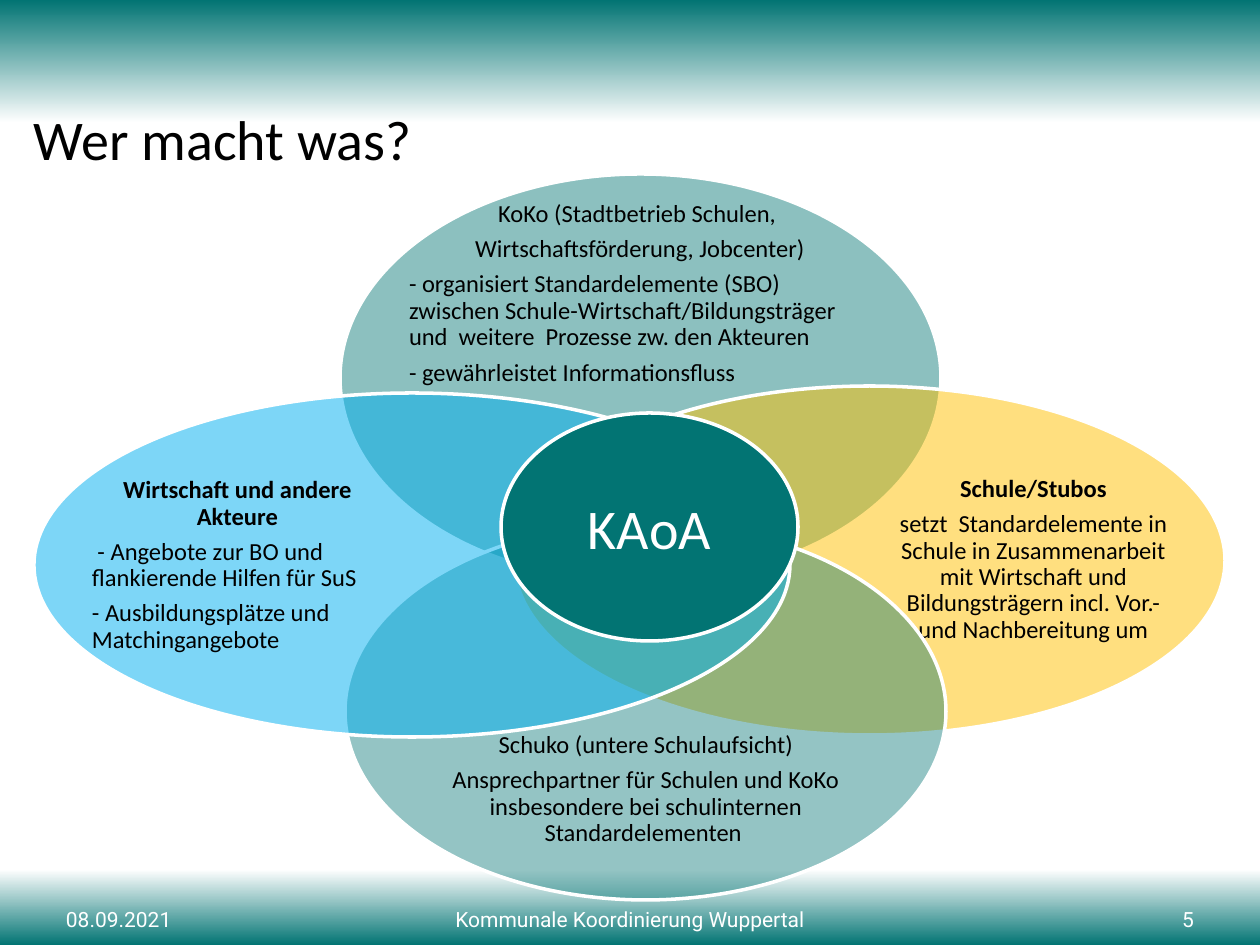
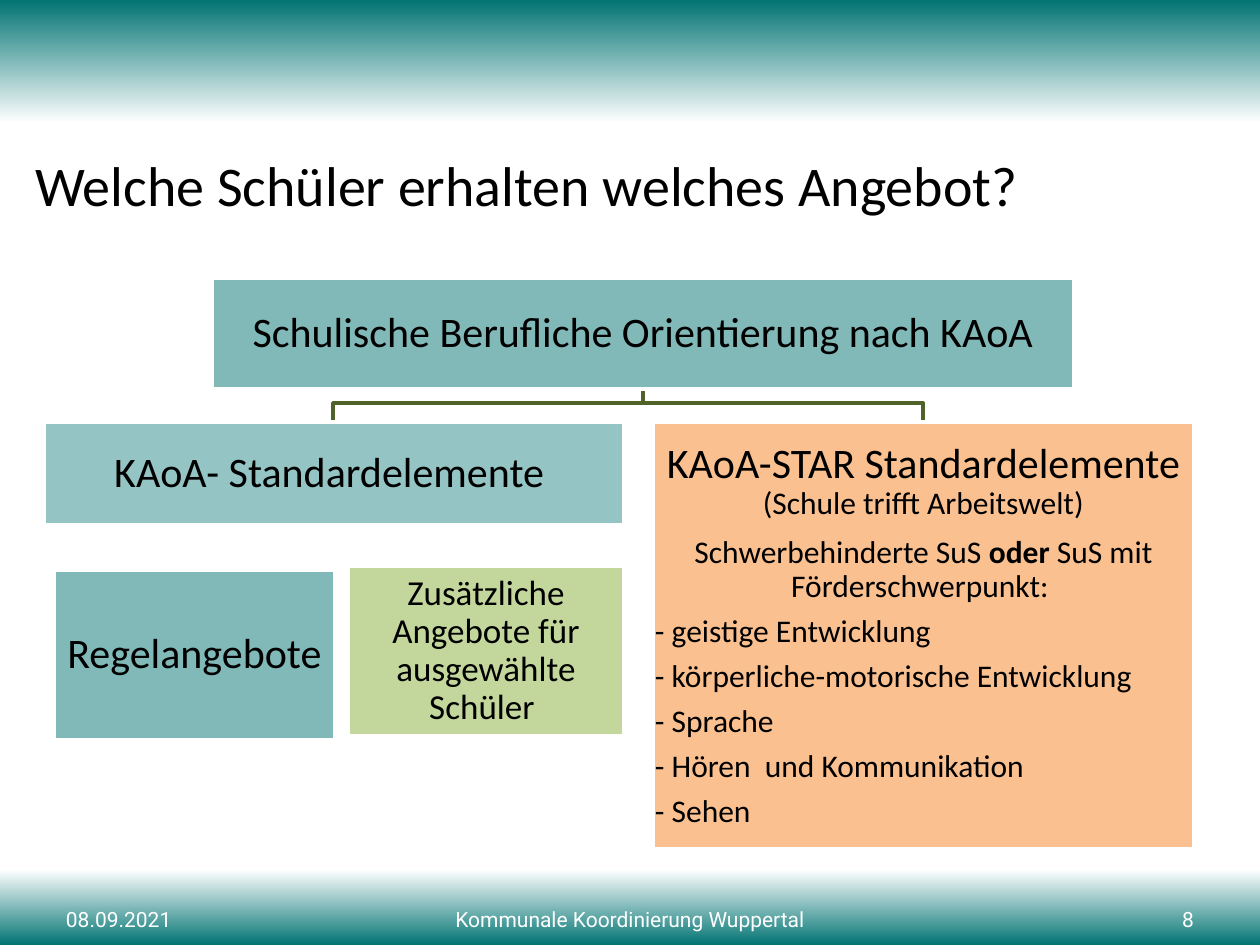
"""Builds two slides on the KAoA partners and the offers for pupils."""
from copy import deepcopy

from pptx import Presentation
from pptx.dml.color import RGBColor
from pptx.enum.shapes import MSO_SHAPE
from pptx.enum.text import MSO_ANCHOR, MSO_AUTO_SIZE, PP_ALIGN
from pptx.oxml.ns import qn
from pptx.util import Pt

LEFT, CENTER, RIGHT = PP_ALIGN.LEFT, PP_ALIGN.CENTER, PP_ALIGN.RIGHT
TOP, MIDDLE = MSO_ANCHOR.TOP, MSO_ANCHOR.MIDDLE
ELLIPSE, RECT = MSO_SHAPE.OVAL, MSO_SHAPE.RECTANGLE
PX = 914400 / 126


class Theme:
    teal, white, black = "027473", "FFFFFF", "000000"
    yellow, blue, green, orange, olive = "FFC000", "00B0F0", "C3D69B", "FAC090", "4F6228"
    body_font, footer_font = "Calibri", "Roboto"
    title, head, sub, item, small, footer = 32, 24, 20, 18, 14, 12
    line = 2
    background = [(0, teal), (13, white), (52, white), (92, white), (100, teal)]


def add_box(s, box, kind=None, fill=None, alpha=100):
    dims = [round(v * PX) for v in box]
    if kind is None:
        return s.shapes.add_textbox(*dims)
    sp = s.shapes.add_shape(kind, *dims)
    sp.shadow.inherit = False
    sp.fill.solid()
    sp.fill.fore_color.rgb = RGBColor.from_string(fill)
    if alpha < 100:
        clr = sp.fill._xPr.find(".//" + qn("a:srgbClr"))
        clr.makeelement(qn("a:alpha"), {})
        a = deepcopy(clr)
        a.tag = qn("a:alpha")
        a.set("val", str(alpha * 1000))
        clr.append(a)
    sp.line.color.rgb = RGBColor.from_string(Theme.white)
    sp.line.width = Pt(Theme.line)
    return sp


def write(sp, paras, size=Theme.small, color=Theme.black, font=Theme.body_font,
          align=CENTER, anchor=MIDDLE, ins=(0, 0, 0, 0), spacing=0.9, after=0.35):
    tf = sp.text_frame
    tf.word_wrap = True
    tf.auto_size = MSO_AUTO_SIZE.NONE
    tf.vertical_anchor = anchor
    tf.margin_left, tf.margin_top, tf.margin_right, tf.margin_bottom = [
        round(v * PX) for v in ins]
    for i, para in enumerate(paras):
        runs = [(para, {})] if isinstance(para, str) else para
        p = tf.paragraphs[0] if i == 0 else tf.add_paragraph()
        p.alignment = LEFT if runs[0][0].lstrip().startswith("- ") else align
        p.line_spacing = spacing
        p.space_before = Pt(0)
        p.space_after = Pt(round(after * runs[0][1].get("size", size), 2))
        for text, fmt in runs:
            if text == "\n":
                p.add_line_break()
                continue
            r = p.add_run()
            r.text = text
            r.font.name = font
            r.font.size = Pt(fmt.get("size", size))
            r.font.bold = fmt.get("bold", False)
            r.font.color.rgb = RGBColor.from_string(color)


prs = Presentation()
prs.slide_width, prs.slide_height = round(1260 * PX), round(945 * PX)

bg = prs.slide_master.background.fill
bg.gradient()
bg.gradient_angle = 270
stops = prs.slide_master.element.find(".//" + qn("a:gsLst"))
for gs in list(stops):
    stops.remove(gs)
for pos, color in Theme.background:
    gs = stops.makeelement(qn("a:gs"), {"pos": str(pos * 1000)})
    gs.append(gs.makeelement(qn("a:srgbClr"), {"val": color}))
    stops.append(gs)

PAD = (13, 6, 13, 6)
slides = []
for title, x, y, number in [("Wer macht was?", 34, 98, "5"),
                            ("Welche Schüler erhalten welches Angebot?", 35, 144, "8")]:
    s = prs.slides.add_slide(prs.slide_layouts[5])
    sp = s.shapes.title
    sp.left, sp.top, sp.width, sp.height = [round(v * PX) for v in (x, y, 1191, 73)]
    write(sp, [title], size=Theme.title, align=LEFT, anchor=TOP, ins=(0, 6, 13, 6),
          spacing=1, after=0)
    for text, left, width, align in [("08.09.2021", 53, 159, LEFT),
                                     ("Kommunale Koordinierung Wuppertal", 382, 496, CENTER),
                                     (number, 1048, 159, RIGHT)]:
        write(add_box(s, (left, 900, width, 39)), [text], size=Theme.footer,
              color=Theme.white, font=Theme.footer_font, align=align, ins=PAD,
              spacing=1, after=0)
    slides.append(s)
partners, offers = slides

bold = {"bold": True}
for oval, fill, alpha, label, paras in [
    ((340, 174, 601, 408), Theme.teal, 45, (409, 229, 462, 130),
     ["KoKo (Stadtbetrieb Schulen, ",
      "Wirtschaftsförderung, Jobcenter)",
      "- organisiert Standardelemente (SBO) zwischen Schule-Wirtschaft/Bildungsträger "
      "und  weitere  Prozesse zw. den Akteuren",
      "- gewährleistet Informationsfluss"]),
    ((514, 386, 711, 349), Theme.yellow, 50, (897, 426, 273, 268),
     [[("Schule/Stubos", bold)],
      "setzt  Standardelemente in Schule in Zusammenarbeit mit Wirtschaft und "
      "Bildungsträgern incl. Vor.- und Nachbereitung um"]),
    ((345, 523, 601, 377), Theme.teal, 42, (415, 730, 462, 120),
     ["Schuko (untere Schulaufsicht)",
      "Ansprechpartner für Schulen und KoKo insbesondere bei schulinternen "
      "Standardelementen "]),
    ((34, 393, 756, 344), Theme.blue, 51, (92, 433, 291, 265),
     [[("Wirtschaft und andere Akteure", bold)],
      " - Angebote zur BO und  flankierende Hilfen für SuS",
      "- Ausbildungsplätze und Matchingangebote"]),
]:
    add_box(partners, oval, ELLIPSE, fill, alpha)
    write(add_box(partners, label), paras)
write(add_box(partners, (501, 413, 297, 228), ELLIPSE, Theme.teal), ["KAoA"],
      size=Theme.title, color=Theme.white, ins=PAD, spacing=1, after=0)

for x in (923, 333):
    fb = offers.shapes.build_freeform(643, 389, scale=PX)
    fb.add_line_segments([(643, 403), (x, 403), (x, 422)], close=False)
    sp = fb.convert_to_shape()
    sp.shadow.inherit = False
    sp.fill.background()
    sp.line.color.rgb = RGBColor.from_string(Theme.olive)
    sp.line.width = Pt(Theme.line)

for box, fill, alpha, size, paras in [
    ((212, 278, 862, 111), Theme.teal, 50, Theme.head,
     ["Schulische Berufliche Orientierung nach KAoA"]),
    ((44, 422, 580, 103), Theme.teal, 42, Theme.head, ["KAoA- Standardelemente "]),
    ((348, 566, 276, 170), Theme.green, 100, Theme.sub,
     ["Zusätzliche Angebote für ausgewählte Schüler "]),
    ((54, 570, 281, 170), Theme.teal, 50, Theme.head, ["Regelangebote"]),
    ((653, 422, 541, 427), Theme.orange, 100, Theme.item,
     [[("KAoA-STAR Standardelemente", {"size": Theme.head}), ("\n", {}),
       ("(Schule trifft Arbeitswelt)", {})],
      [("Schwerbehinderte SuS ", {}), ("oder", bold),
       (" SuS mit Förderschwerpunkt: ", {})],
      "- geistige Entwicklung",
      "- körperliche-motorische Entwicklung",
      "- Sprache",
      "- Hören  und Kommunikation",
      "- Sehen"]),
]:
    write(add_box(offers, box, RECT, fill, alpha), paras, size=size, ins=(2, 2, 2, 2))

prs.save("out.pptx")
